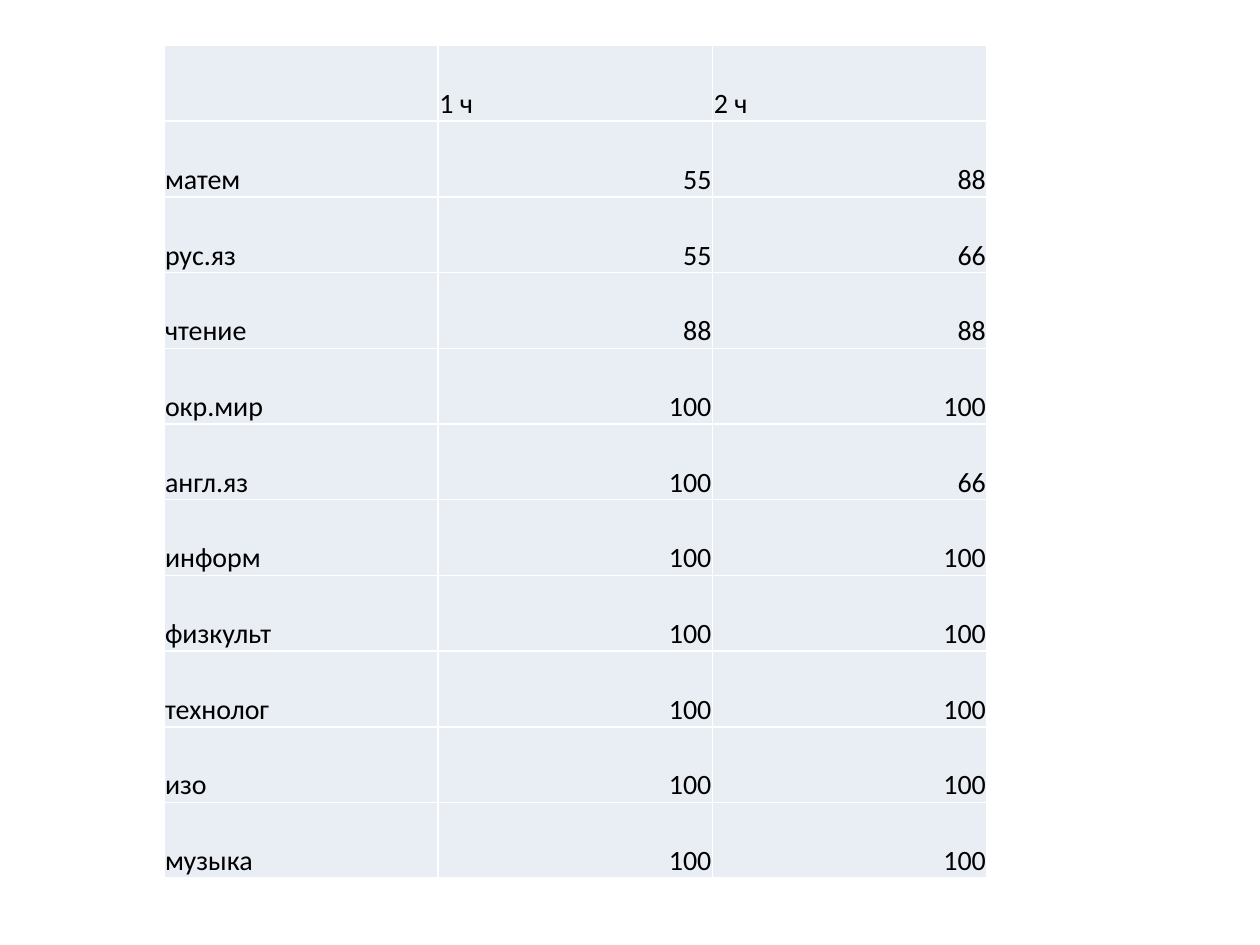
import pptx
import pptx.util
import pptx.dml.color
import pptx.enum.text
import pptx.oxml

Pt = pptx.util.Pt
NAMESPACE = "http://schemas.openxmlformats.org/drawingml/2006/main"

HEADER = ("", "1 ч", "2 ч")
RESULTS = [
    ("матем", 55, 88),
    ("рус.яз", 55, 66),
    ("чтение", 88, 88),
    ("окр.мир", 100, 100),
    ("англ.яз", 100, 66),
    ("информ", 100, 100),
    ("физкульт", 100, 100),
    ("технолог", 100, 100),
    ("изо", 100, 100),
    ("музыка", 100, 100),
]


def color(value):
    return pptx.dml.color.RGBColor.from_string(value)


def add_borders(cell, line_color, width):
    properties = cell._tc.get_or_add_tcPr()
    for side in ("lnL", "lnR", "lnT", "lnB"):
        properties.append(pptx.oxml.parse_xml(
            f'<a:{side} xmlns:a="{NAMESPACE}" w="{Pt(width)}"><a:solidFill>'
            f'<a:srgbClr val="{line_color}"/></a:solidFill></a:{side}>'))


def format_cell(cell, value):
    # Borders come before the fill in the cell properties
    add_borders(cell, "FFFFFF", 1)
    cell.fill.solid()
    cell.fill.fore_color.rgb = color("E9EDF4")
    cell.margin_left = cell.margin_right = cell.margin_top = Pt(0.72)
    cell.margin_bottom = Pt(0)
    cell.vertical_anchor = pptx.enum.text.MSO_ANCHOR.BOTTOM

    # Numbers align right, labels left
    paragraph = cell.text_frame.paragraphs[0]
    paragraph.text = str(value)
    align = pptx.enum.text.PP_ALIGN
    paragraph.alignment = align.RIGHT if isinstance(value, int) else align.LEFT
    paragraph.font.name = "Calibri"
    paragraph.font.size = Pt(16)
    paragraph.font.color.rgb = color("000000")


def add_results_table(slide, left, top, width, height):
    rows = [HEADER, *RESULTS]
    table = slide.shapes.add_table(
        len(rows), len(HEADER), Pt(left), Pt(top), Pt(width), Pt(height)).table
    table.first_row = False
    table.horz_banding = False
    for column in table.columns:
        column.width = Pt(width / len(HEADER))
    for row, values in zip(table.rows, rows):
        row.height = Pt(height / len(rows))
        for cell, value in zip(row.cells, values):
            format_cell(cell, value)


def main():
    presentation = pptx.Presentation()
    presentation.slide_width = Pt(720)
    presentation.slide_height = Pt(540)
    slide = presentation.slides.add_slide(presentation.slide_layouts[6])
    add_results_table(slide, left=93.6, top=26, width=470.5, height=476)
    presentation.save("out.pptx")


if __name__ == "__main__":
    main()
